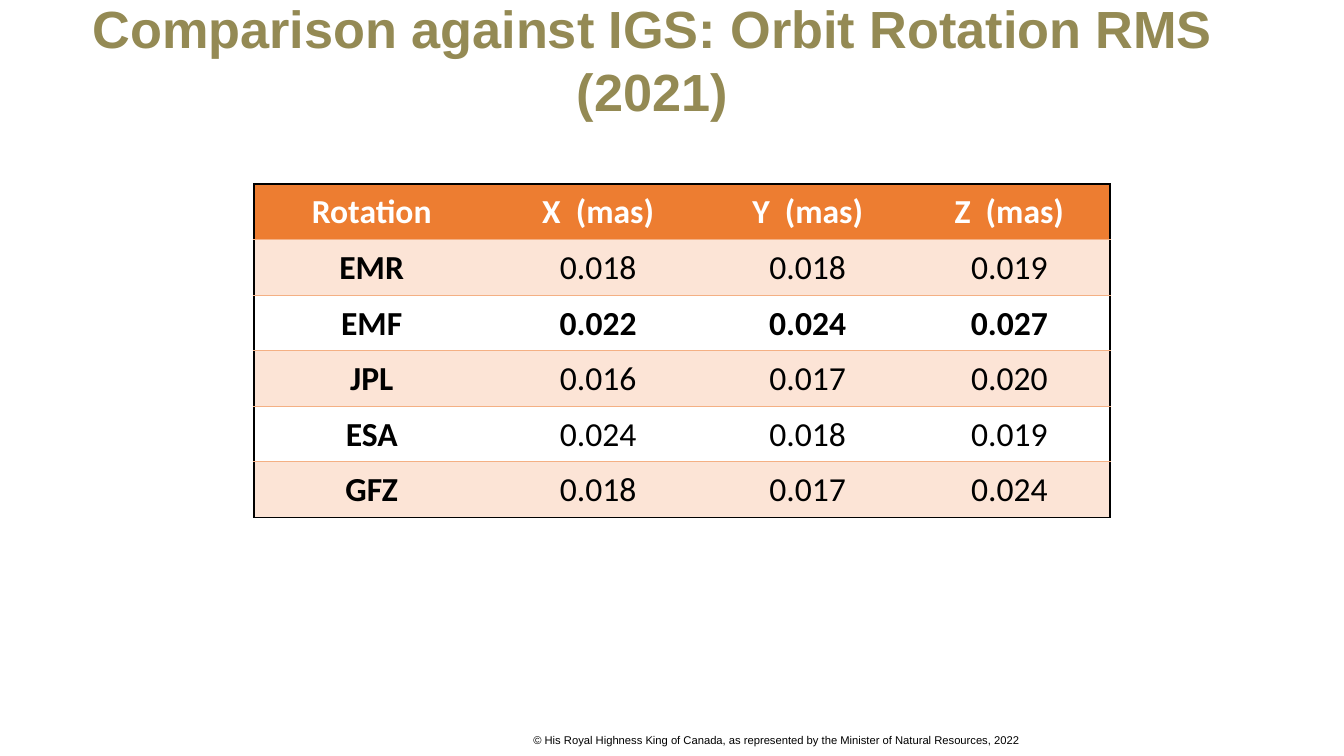
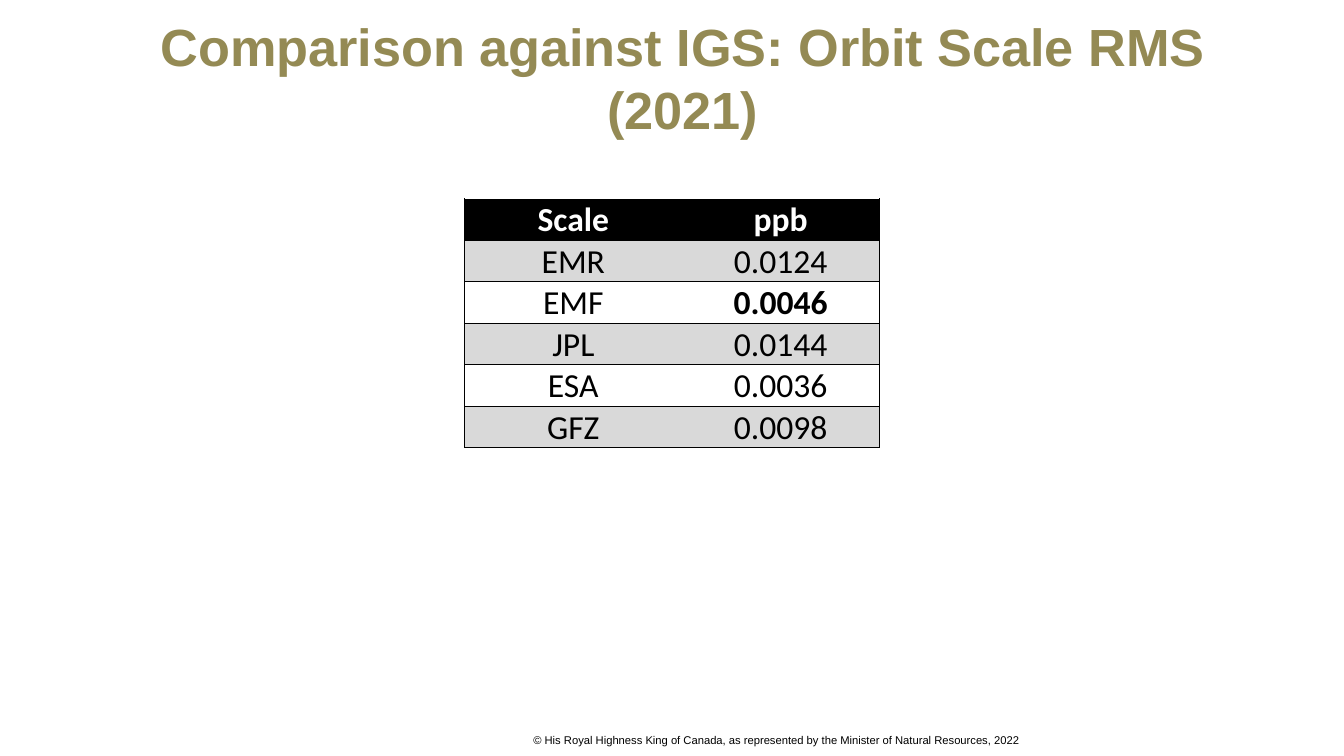
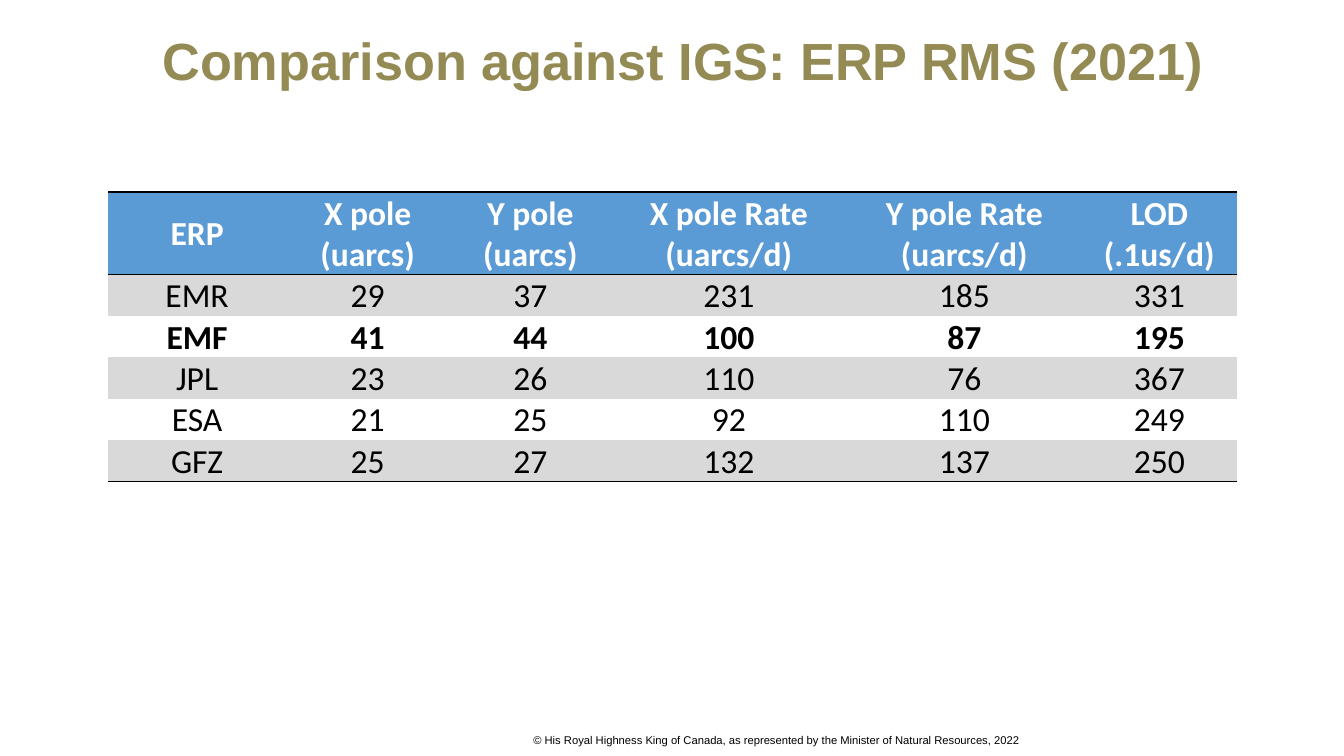
from dataclasses import dataclass

from lxml.etree import SubElement
from pptx import Presentation
from pptx.dml.color import RGBColor
from pptx.enum.text import MSO_ANCHOR, PP_ALIGN
from pptx.oxml.ns import qn
from pptx.util import Cm, Pt


@dataclass(frozen=True)
class Theme:
    heading_font: str = "Arial"
    table_font: str = "Calibri"
    title_size: int = 28
    table_size: int = 18
    footer_size: int = 6
    title: str = "948A54"
    black: str = "000000"
    white: str = "FFFFFF"
    grey: str = "D9D9D9"
    orange: str = "ED7D31"
    peach: str = "FCE4D6"
    apricot: str = "F4B084"
    blue: str = "5B9BD5"


@dataclass(frozen=True)
class TableStyle:
    header: str
    band: str
    outer: tuple
    header_rule: tuple
    row_rule: tuple = None
    sides: tuple = None
    body_anchor: MSO_ANCHOR = MSO_ANCHOR.MIDDLE


THEME = Theme()
THIN_BLACK = (THEME.black, 0.5)
BLACK = (THEME.black, 1)
APRICOT = (THEME.apricot, 0.5)

ROTATION_STYLE = TableStyle(THEME.orange, THEME.peach, BLACK, APRICOT, APRICOT, BLACK)
SCALE_STYLE = TableStyle(
    THEME.black, THEME.grey, THIN_BLACK, THIN_BLACK, THIN_BLACK, THIN_BLACK
)
ERP_STYLE = TableStyle(
    THEME.blue, THEME.grey, BLACK, BLACK, body_anchor=MSO_ANCHOR.BOTTOM
)

FOOTER = (
    "© His Royal Highness King of Canada, as represented by the "
    "Minister of Natural Resources, 2022"
)
EMF_ROW = 2


class Deck:
    def __init__(self, theme):
        self.theme = theme
        self.presentation = Presentation()
        self.presentation.slide_width = Cm(25.4)
        self.presentation.slide_height = Cm(14.29)
        self.slide = None

    def new_slide(self, title, title_top, title_width=22.86):
        theme = self.theme
        blank = self.presentation.slide_layouts[6]
        self.slide = self.presentation.slides.add_slide(blank)
        self.text(FOOTER, 9.83, 13.74, 13.82, 0.76, theme.footer_size, theme.black)
        self.text(
            title, 1.47, title_top, title_width, 1.09, theme.title_size, theme.title,
            bold=True, align=PP_ALIGN.CENTER, anchor=MSO_ANCHOR.MIDDLE,
        )

    def text(self, content, left, top, width, height, size, color,
             bold=False, align=PP_ALIGN.LEFT, anchor=MSO_ANCHOR.TOP):
        box = self.slide.shapes.add_textbox(Cm(left), Cm(top), Cm(width), Cm(height))
        frame = box.text_frame
        frame.word_wrap = True
        frame.vertical_anchor = anchor
        frame.text = content
        self.format(frame.paragraphs[0], self.theme.heading_font, size, color, bold, align)

    def format(self, paragraph, font_name, size, color, bold, align):
        paragraph.alignment = align
        for run in paragraph.runs:
            run.font.name = font_name
            run.font.size = Pt(size)
            run.font.bold = bold
            run.font.color.rgb = RGBColor.from_string(color)

    def table(self, rows, left, top, widths, row_height, style, is_bold, header_lines=1):
        heights = [row_height * header_lines] + [row_height] * (len(rows) - 1)
        table = self.slide.shapes.add_table(
            len(rows), len(widths), Cm(left), Cm(top), Cm(sum(widths)), Cm(sum(heights))
        ).table
        for column, width in zip(table.columns, widths):
            column.width = Cm(width)
        for row, height in zip(table.rows, heights):
            row.height = Cm(height)
        rules = [style.outer, style.header_rule]
        rules += [style.row_rule] * (len(rows) - 2) + [style.outer]
        last_column = len(widths) - 1
        for r, values in enumerate(rows):
            for c, value in enumerate(values):
                cell = table.cell(r, c)
                self.borders(
                    cell,
                    L=style.sides if c == 0 else None,
                    R=style.sides if c == last_column else None,
                    T=rules[r],
                    B=rules[r + 1],
                )
                self.cell(cell, value, r, style, r == 0 or is_bold(r, c))

    def cell(self, cell, value, row, style, bold):
        theme = self.theme
        is_header = row == 0
        if row % 2 or is_header:
            cell.fill.solid()
            fill = style.header if is_header else style.band
            cell.fill.fore_color.rgb = RGBColor.from_string(fill)
        else:
            cell.fill.background()
        cell.margin_left = cell.margin_right = cell.margin_top = Cm(0.02)
        cell.margin_bottom = 0
        cell.vertical_anchor = MSO_ANCHOR.MIDDLE if is_header else style.body_anchor
        cell.text_frame.text = value
        self.format(
            cell.text_frame.paragraphs[0], theme.table_font, theme.table_size,
            theme.white if is_header else theme.black, bold, PP_ALIGN.CENTER,
        )

    def borders(self, cell, **edges):
        properties = cell._tc.get_or_add_tcPr()
        for edge, rule in edges.items():
            line = SubElement(properties, qn(f"a:ln{edge}"))
            if rule is None:
                SubElement(line, qn("a:noFill"))
                continue
            color, width = rule
            line.set("w", str(Pt(width)))
            fill = SubElement(line, qn("a:solidFill"))
            SubElement(fill, qn("a:srgbClr")).set("val", color)


def main():
    deck = Deck(THEME)

    deck.new_slide("Comparison against IGS: Orbit Rotation RMS (2021)", 0.58, 21.72)
    rotation = [
        ("Rotation", "X  (mas)", "Y  (mas)", "Z  (mas)"),
        ("EMR", "0.018", "0.018", "0.019"),
        ("EMF", "0.022", "0.024", "0.027"),
        ("JPL", "0.016", "0.017", "0.020"),
        ("ESA", "0.024", "0.018", "0.019"),
        ("GFZ", "0.018", "0.017", "0.024"),
    ]
    deck.table(
        rotation, 4.8, 3.48, [4.45, 4.11, 3.81, 3.81], 1.05, ROTATION_STYLE,
        lambda row, column: row == EMF_ROW or column == 0,
    )

    deck.new_slide("Comparison against IGS: Orbit Scale RMS (2021)", 0.91)
    scale = [
        ("Scale", "ppb"),
        ("EMR", "0.0124"),
        ("EMF", "0.0046"),
        ("JPL", "0.0144"),
        ("ESA", "0.0036"),
        ("GFZ", "0.0098"),
    ]
    deck.table(
        scale, 8.78, 3.76, [4.11, 3.73], 0.78, SCALE_STYLE,
        lambda row, column: row == EMF_ROW and column > 0,
    )

    deck.new_slide("Comparison against IGS: ERP RMS (2021)", 0.58)
    erp = [
        ("ERP", "X pole (uarcs)", "Y pole (uarcs)", "X pole Rate (uarcs/d)",
         "Y pole Rate (uarcs/d)", "LOD (.1us/d)"),
        ("EMR", "29", "37", "231", "185", "331"),
        ("EMF", "41", "44", "100", "87", "195"),
        ("JPL", "23", "26", "110", "76", "367"),
        ("ESA", "21", "25", "92", "110", "249"),
        ("GFZ", "25", "27", "132", "137", "250"),
    ]
    deck.table(
        erp, 2.05, 3.63, [3.35, 3.1, 3.05, 4.45, 4.45, 2.92], 0.78, ERP_STYLE,
        lambda row, column: row == EMF_ROW, header_lines=2,
    )

    deck.presentation.save("out.pptx")


if __name__ == "__main__":
    main()
